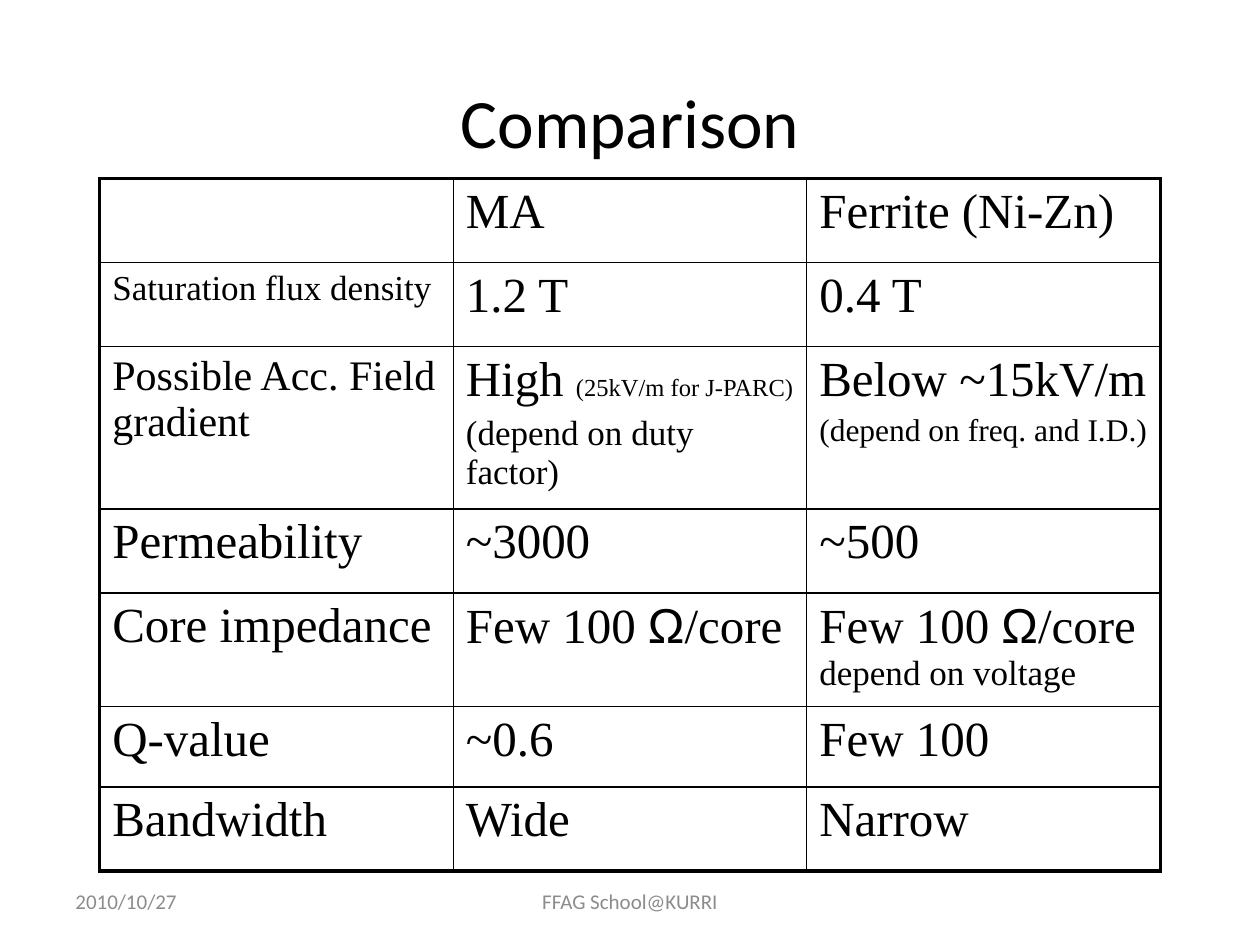
from lxml.etree import SubElement as Sub
from pptx import Presentation
from pptx.dml.color import RGBColor as RGB
from pptx.enum.text import MSO_ANCHOR as Anchor, PP_ALIGN as Align
from pptx.oxml.ns import qn
from pptx.util import Pt

COLORS = {"ink": "000000", "gray": "8C8C8C"}
SERIF, SANS, GREEK = "Times New Roman", "Calibri", "Arial"
WIDTH = 202
ROWS = [48, 48, 90, 48, 60.5, 46, 48]
OHM = [("Few 100 ", 28), ("Ω", 28, GREEK), ("/core", 28)]
CELLS = [
    ["", "MA", "Ferrite (Ni-Zn)"],
    [[[("Saturation flux density", 20)]], "1.2 T", "0.4 T"],
    [
        [[("Possible Acc. Field gradient", 24)]],
        [[("High ", 28), ("(25kV/m for J-PARC)", 14)], [("(depend on duty factor)", 20)]],
        [[("Below ~15kV/m", 28)], [("(depend on freq. and I.D.)", 18)]],
    ],
    ["Permeability", "~3000", "~500"],
    ["Core impedance", [OHM], [OHM + [(" ", 28), ("depend on voltage", 20)]]],
    ["Q-value", "~0.6", "Few 100"],
    ["Bandwidth", "Wide", "Narrow"],
]


def put(obj, vals):
    for key, val in vals.items():
        setattr(obj, key, val)


def add_run(para, text, size, font, tint="ink"):
    run = para.add_run()
    run.text = text
    put(run.font, {"size": Pt(size), "name": font})
    run.font.color.rgb = RGB.from_string(COLORS[tint])


def add_label(slide, text, box, size, align, tint):
    frame = slide.shapes.add_textbox(*map(Pt, box)).text_frame
    put(frame, {"word_wrap": True, "vertical_anchor": Anchor.MIDDLE})
    para = frame.paragraphs[0]
    para.alignment = align
    add_run(para, text, size, SANS, tint)


def fill_cell(cell, text):
    paras = [[(text, 28)]] if isinstance(text, str) else text
    frame = cell.text_frame
    for n, runs in enumerate(paras):
        para = frame.add_paragraph() if n else frame.paragraphs[0]
        if n:
            para.space_before = Pt(runs[0][1] * 0.2)
        for words, size, *font in runs:
            if words:
                add_run(para, words, size, font[0] if font else SERIF)


def add_lines(cell, row, col):
    props = cell._tc.get_or_add_tcPr()
    outer = {
        "L": col == 0,
        "R": col == len(CELLS[0]) - 1,
        "T": row == 0,
        "B": row == len(CELLS) - 1,
    }
    for side, edge in outer.items():
        line = Sub(props, qn(f"a:ln{side}"), w=str(Pt(2.25 if edge else 1)))
        Sub(Sub(line, qn("a:solidFill")), qn("a:srgbClr"), val=COLORS["ink"])
    cell.fill.background()


def add_grid(slide):
    cols = len(CELLS[0])
    box = (57, 102, cols * WIDTH, sum(ROWS))
    table = slide.shapes.add_table(len(ROWS), cols, *map(Pt, box)).table
    put(table, {"first_row": False, "horz_banding": False})
    for col in table.columns:
        col.width = Pt(WIDTH)
    for r, (high, texts) in enumerate(zip(ROWS, CELLS)):
        table.rows[r].height = Pt(high)
        for c, text in enumerate(texts):
            cell = table.cell(r, c)
            fill_cell(cell, text)
            add_lines(cell, r, c)


def main():
    deck = Presentation()
    put(deck, {"slide_width": Pt(720), "slide_height": Pt(540)})
    slide = deck.slides.add_slide(deck.slide_layouts[6])
    add_label(slide, "Comparison", (54, 48, 612, 42), 39.6, Align.CENTER, "ink")
    add_grid(slide)
    add_label(slide, "2010/10/27", (36, 500.5, 168, 28.75), 12, Align.LEFT, "gray")
    add_label(slide, "FFAG School@KURRI", (246, 500.5, 228, 28.75), 12, Align.CENTER, "gray")
    deck.save("out.pptx")


if __name__ == "__main__":
    main()
